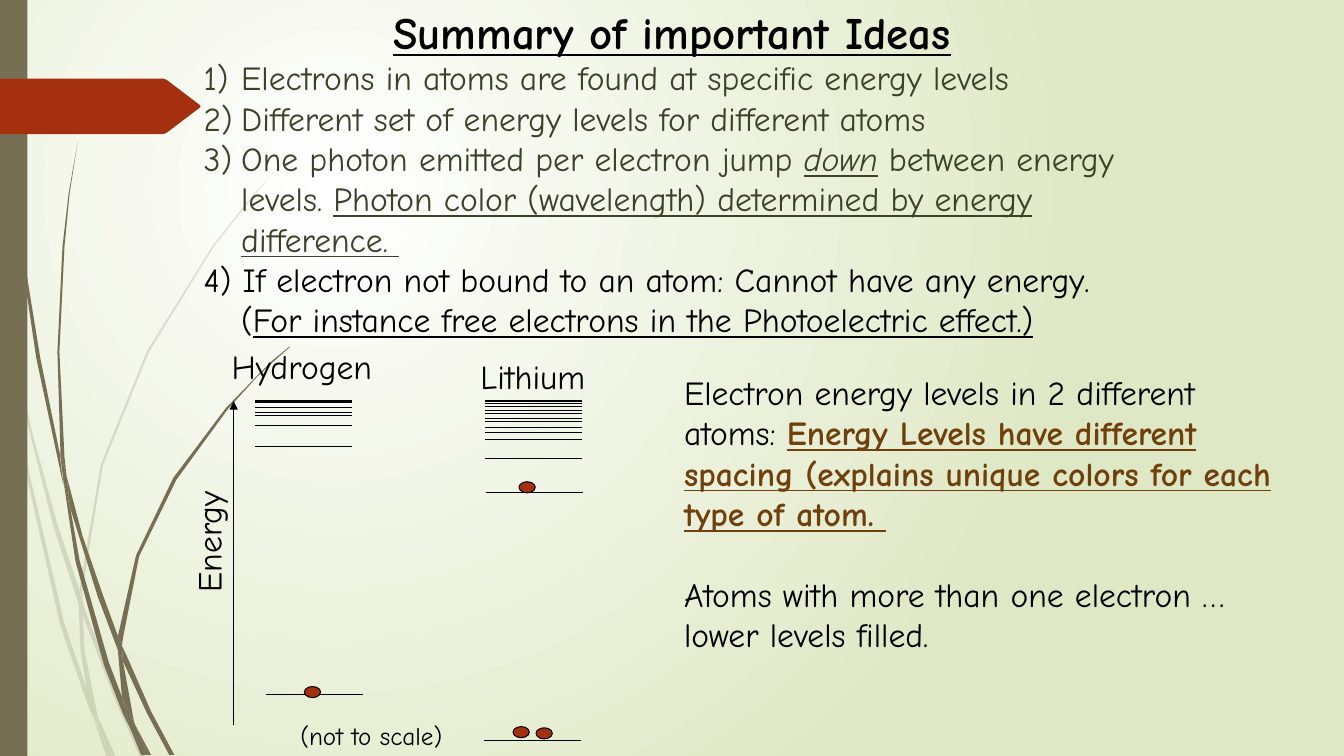
"""Builds the slide that sums up electron energy levels in atoms."""
from dataclasses import dataclass

from lxml import etree
from pptx import Presentation
from pptx import util as u
from pptx.dml.color import RGBColor
from pptx.enum import shapes, text
from pptx.oxml.ns import qn


@dataclass(frozen=True)
class Theme:
    """Colours, font and type sizes of the slide."""
    font: str = "Comic Neue"
    title: int = 32
    body: int = 24
    small: int = 18
    black: str = "000000"
    olive: str = "39432A"
    brown: str = "6F3F0C"
    taupe: str = "766F54"
    rust: str = "A53010"
    glow: tuple = ("FFFFFF", "DFE8C4")
    hairline: float = 0.75
    hanging: float = 0.95
    grid: float = 0.0254


class SlideBuilder:
    """Draws styled elements on one slide."""

    def __init__(self, slide, theme):
        """Keep the slide and its theme."""
        self.slide, self.theme = slide, theme

    def background(self):
        """Fill the background with a round glow."""
        fill = self.slide.background.fill
        fill.gradient()
        for stop, color, position in zip(fill.gradient_stops, self.theme.glow, (0, 1)):
            stop.color.rgb = RGBColor.from_string(color)
            stop.position = position
        gradient = next(self.slide.element.iter(qn("a:gradFill")))
        gradient.remove(gradient.find(qn("a:lin")))
        circle = etree.SubElement(gradient, qn("a:path"), path="circle")
        etree.SubElement(circle, qn("a:fillToRect"), l="50000", t="50000", r="100000", b="100000")

    def paint(self, shape, color, outline=None, alpha=None):
        """Give a shape its fill, outline and transparency."""
        shape.shadow.inherit = False
        shape.fill.solid()
        shape.fill.fore_color.rgb = RGBColor.from_string(color)
        if alpha:
            fill_color = next(shape.element.iter(qn("a:srgbClr")))
            etree.SubElement(fill_color, qn("a:alpha"), val=str(alpha * 1000))
        if outline:
            shape.line.color.rgb = RGBColor.from_string(outline)
            shape.line.width = u.Pt(self.theme.hairline)
        else:
            shape.line.fill.background()

    def outline(self, points, color, alpha=None):
        """Draw a closed outline from points on the fine grid."""
        builder = self.slide.shapes.build_freeform(*points[0], scale=u.Cm(self.theme.grid))
        builder.add_line_segments(points[1:])
        self.paint(builder.convert_to_shape(), color, alpha=alpha)

    def preset(self, kind, box, color, outline=None):
        """Draw a preset shape."""
        shape = self.slide.shapes.add_shape(kind, *map(u.Cm, box))
        self.paint(shape, color, outline)

    def electron(self, left, top):
        """Draw one electron."""
        self.preset(shapes.MSO_SHAPE.OVAL, (left, top, 0.41, 0.28), self.theme.rust, self.theme.black)

    def line(self, start, end, arrow=False):
        """Draw a straight line, with an arrowhead at its end if asked."""
        connector = self.slide.shapes.add_connector(
            shapes.MSO_CONNECTOR.STRAIGHT, *map(u.Cm, (*start, *end)))
        connector.line.color.rgb = RGBColor.from_string(self.theme.black)
        connector.line.width = u.Pt(self.theme.hairline)
        properties = connector.element.spPr
        if arrow:
            etree.SubElement(properties.find(qn("a:ln")), qn("a:tailEnd"), type="triangle")
        etree.SubElement(properties, qn("a:effectLst"))

    def level(self, left, top):
        """Draw one energy level."""
        self.line((left, top), (left + 2.45, top))

    def textbox(self, box, wrap=True, rotation=0):
        """Add an empty text box and return its frame."""
        shape = self.slide.shapes.add_textbox(*map(u.Cm, box))
        shape.rotation = rotation
        shape.text_frame.word_wrap = wrap
        shape.text_frame.auto_size = text.MSO_AUTO_SIZE.SHAPE_TO_FIT_TEXT
        return shape.text_frame

    def paragraph(self, frame, runs, size=None, color=None):
        """Fill the next paragraph from (words, font settings) pairs."""
        paragraph = frame.paragraphs[0]
        if paragraph.runs:
            paragraph = frame.add_paragraph()
        paragraph.font.name = self.theme.font
        paragraph.font.size = u.Pt(size or self.theme.body)
        paragraph.font.color.rgb = RGBColor.from_string(color or self.theme.black)
        for words, settings in runs:
            run = paragraph.add_run()
            run.text = words
            for name, value in settings.items():
                if name == "color":
                    run.font.color.rgb = RGBColor.from_string(value)
                else:
                    setattr(run.font, name, value)
        return paragraph

    def indent(self, paragraph, first_line, numbered=False):
        """Indent a paragraph and number it if asked."""
        properties = paragraph._p.get_or_add_pPr()
        properties.set("marL", str(u.Cm(self.theme.hanging)))
        properties.set("indent", str(u.Cm(first_line)))
        if numbered:
            number = etree.Element(qn("a:buAutoNum"), type="arabicParenR")
            properties.find(qn("a:defRPr")).addprevious(number)

    def label(self, words, box, size=None, rotation=0):
        """Add a one-line label."""
        self.paragraph(self.textbox(box, False, rotation), [(words, {})], size)


PALE_WISPS = [
    [(10, 350), (8, 322), (0, 282), (0, 299), (9, 344)],
    [(53, 522), (78, 599), (79, 586), (57, 520), (33, 433), (13, 345), (16, 376)],
    [(85, 607), (82, 596), (82, 610), (114, 694), (139, 751), (144, 751), (118, 692)],
    [(110, 751), (115, 751), (97, 711)],
    [(86, 683), (64, 619), (29, 469), (16, 376), (10, 350), (26, 470), (60, 621), (85, 693),
     (93, 714), (92, 707)],
    [(78, 599), (80, 646), (86, 683), (89, 692), (97, 711), (96, 706), (84, 646), (82, 610), (81, 608)],
    [(82, 584), (102, 462), (148, 349), (212, 245), (249, 198), (268, 175), (289, 154), (289, 153),
     (268, 175), (248, 197), (211, 244), (146, 348), (100, 461), (79, 584), (79, 586), (82, 596)],
    [(93, 714), (106, 751), (110, 751)],
    [(81, 608), (82, 610), (82, 596), (78, 586), (78, 599)],
    [(89, 692), (86, 683), (92, 707), (94, 714), (110, 751), (97, 711)],
]
DARK_WISPS = [
    [(7, 110), (18, 233), (36, 355), (62, 477), (63, 481), (60, 457), (60, 453), (40, 355),
     (20, 232), (8, 109), (5, 48), (4, 0), (3, 0), (4, 48)],
    [(97, 592), (117, 645), (117, 633), (117, 631), (102, 590), (82, 532), (66, 472), (70, 505)],
    [(125, 649), (121, 641), (122, 656), (146, 708), (168, 749), (173, 749), (150, 706)],
    [(121, 691), (108, 657), (79, 556), (70, 505), (63, 477), (75, 557), (103, 659), (122, 708),
     (129, 722), (128, 717)],
    [(66, 472), (64, 453), (59, 349), (64, 245), (69, 193), (77, 141), (68, 193), (62, 245),
     (57, 349), (60, 449)],
    [(147, 749), (150, 749), (134, 719)],
    [(63, 477), (70, 505), (66, 472), (60, 449), (60, 453)],
    [(122, 633), (138, 552), (175, 476), (226, 406), (255, 374), (271, 359), (288, 344), (287, 344),
     (270, 358), (255, 373), (224, 405), (172, 474), (135, 551), (117, 631), (121, 641)],
    [(129, 722), (140, 749), (144, 749)],
    [(117, 645), (121, 691), (128, 706), (134, 719), (133, 716), (122, 656), (120, 651)],
    [(117, 645), (120, 651), (122, 656), (121, 641), (117, 631), (117, 633)],
    [(128, 706), (121, 691), (128, 717), (129, 722), (144, 749), (147, 749), (134, 719)],
]
BANNER = [(0, 78), (162, 78), (165, 79), (198, 104), (199, 106), (198, 107), (165, 132), (162, 133), (0, 133)]
LEVELS = {
    6.43: (10.08, 10.13, 10.26, 10.39, 10.46, 10.72, 11.25),
    6.71: (17.5,),
    12.22: (10.08, 10.11, 10.16, 10.24, 10.34, 10.41, 10.54, 10.62, 10.77, 10.9, 11.07, 11.56),
    12.24: (12.4,),
    12.19: (18.67,),
}
ELECTRONS = [(7.67, 17.3), (12.93, 18.31), (13.51, 18.34), (13.08, 12.14)]
UNDERLINED = {"underline": True}
IDEAS = [
    [("Electrons in atoms are found at specific energy levels", {})],
    [("Different set of energy levels for different atoms", {})],
    [("One photon emitted per electron jump ", {}), ("down", {"italic": True, "underline": True}),
     (" between energy levels. ", {}),
     ("Photon color (wavelength) determined by energy difference. ", UNDERLINED)],
]


def main():
    """Build the slide and save it."""
    theme = Theme()
    presentation = Presentation()
    presentation.slide_width, presentation.slide_height = u.Cm(33.87), u.Cm(19.05)
    builder = SlideBuilder(presentation.slides.add_slide(presentation.slide_layouts[6]), theme)
    builder.background()
    for wisps, alpha in ((PALE_WISPS, 20), (DARK_WISPS, None)):
        for points in wisps:
            builder.outline(points, theme.taupe, alpha)
    builder.preset(shapes.MSO_SHAPE.RECTANGLE, (0, 0, 0.69, 19.05), theme.taupe)
    builder.outline(BANNER, theme.rust)

    heading = [("Summary of important Ideas", {"bold": True, "underline": True})]
    title = builder.paragraph(builder.textbox((4.24, 0, 25.4, 1.6)), heading, theme.title)
    title.alignment = text.PP_ALIGN.CENTER

    for left, tops in LEVELS.items():
        for top in tops:
            builder.level(left, top)
    for position in ELECTRONS:
        builder.electron(*position)
    builder.line((5.89, 18.26), (5.89, 10.11), arrow=True)
    builder.label("Hydrogen", (5.59, 8.59, 4.34, 1.27))
    builder.label("Energy", (3.61, 12.9, 3.28, 1.27), rotation=270)
    builder.label("Lithium", (11.86, 8.84, 3.48, 1.3))
    builder.label("(not to scale)", (7.32, 18.03, 4.47, 1.02), theme.small)

    notes = builder.textbox((16.99, 9.25, 15.82, 7.44))
    builder.paragraph(notes, [
        ("Electron energy levels in 2 different atoms: ", {}),
        ("Energy Levels have different spacing (explains unique colors for each type of atom. ",
         {"bold": True, "underline": True, "color": theme.brown})])
    filled = [("Atoms with more than one electron … lower levels filled.", {})]
    builder.paragraph(notes, filled).space_before = u.Pt(28.7)

    ideas = builder.textbox((4.88, 1.32, 24.77, 7.44))
    for runs in IDEAS:
        builder.indent(builder.paragraph(ideas, runs, color=theme.olive), -theme.hanging, numbered=True)
    unbound = [("4) If electron not bound to an atom: Cannot have any energy.", {})]
    builder.indent(builder.paragraph(ideas, unbound), -theme.hanging)
    example = [("(", {}), ("For instance free electrons in the Photoelectric effect.)", UNDERLINED)]
    builder.indent(builder.paragraph(ideas, example), 0)
    presentation.save("out.pptx")


if __name__ == "__main__":
    main()
